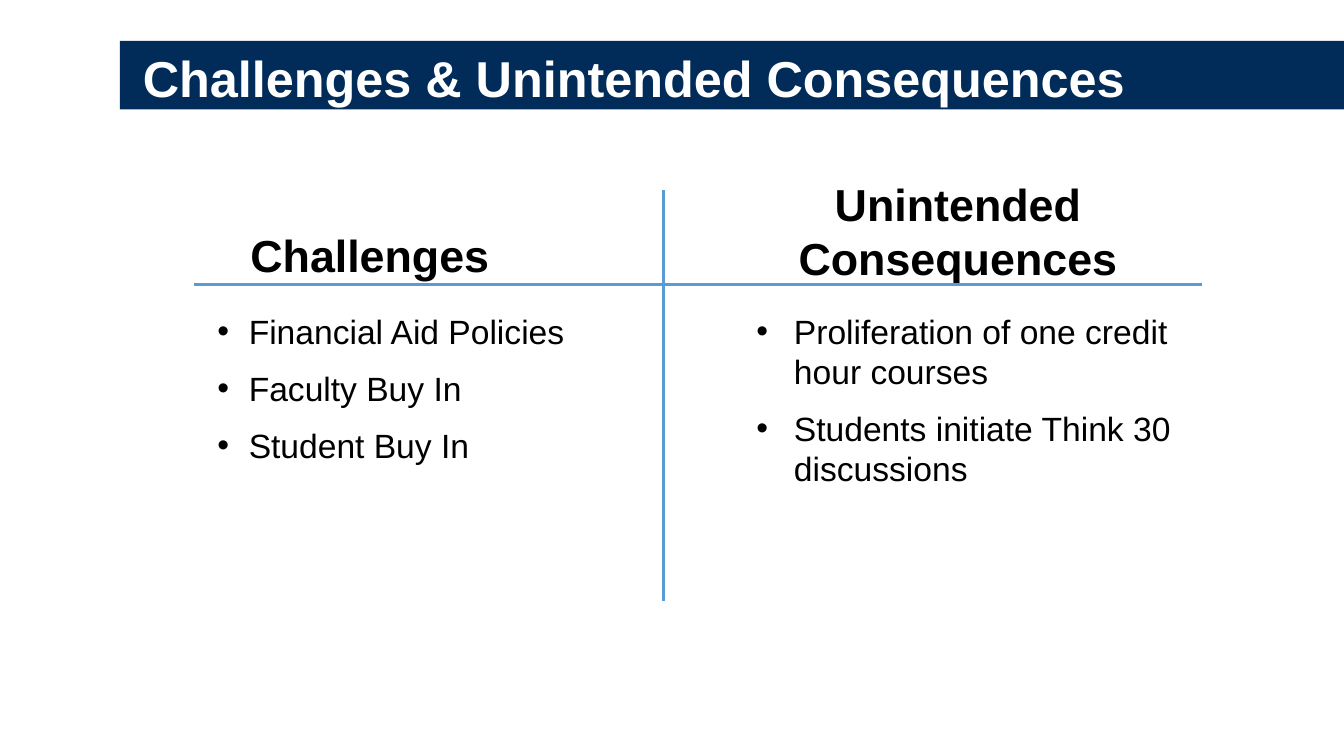
from dataclasses import dataclass

from lxml.etree import SubElement
from pptx import Presentation
from pptx.dml.color import RGBColor
from pptx.enum.shapes import MSO_CONNECTOR as Connector, MSO_SHAPE as Shape
from pptx.enum.text import MSO_ANCHOR as Anchor, PP_ALIGN as Align
from pptx.oxml.ns import qn
from pptx.util import Cm, Pt


@dataclass(frozen=True)
class Theme:
    font: str = "Arial"
    navy: RGBColor = RGBColor(0x01, 0x2C, 0x5A)
    blue: RGBColor = RGBColor(0x5B, 0x9B, 0xD5)
    white: RGBColor = RGBColor(0xFF, 0xFF, 0xFF)
    black: RGBColor = RGBColor(0, 0, 0)
    title_size: Pt = Pt(36)
    heading_size: Pt = Pt(32)
    body_size: Pt = Pt(24)
    rule_width: Pt = Pt(2.25)


THEME = Theme()


def add_text_frame(slide, left, top, width, height, wrap=True):
    text_box = slide.shapes.add_textbox(Cm(left), Cm(top), Cm(width), Cm(height))
    text_box.text_frame.word_wrap = wrap
    return text_box.text_frame


def add_run(paragraph, text, size, color, bold=False):
    run = paragraph.add_run()
    run.text = text
    run.font.name = THEME.font
    run.font.size = size
    run.font.bold = bold
    run.font.color.rgb = color


def add_title(slide, text):
    band = slide.shapes.add_shape(Shape.RECTANGLE, Cm(3.02), Cm(1.03), Cm(30.85), Cm(1.73))
    band.shadow.inherit = False
    band.fill.solid()
    band.fill.fore_color.rgb = THEME.navy
    band.line.fill.background()

    frame = add_text_frame(slide, 3.35, 0.89, 27.53, 2.29)
    frame.vertical_anchor = Anchor.MIDDLE
    paragraph = frame.paragraphs[0]
    paragraph.line_spacing = 0.9
    add_run(paragraph, text, THEME.title_size, THEME.white, bold=True)


def add_heading(slide, text, left, top, width, height):
    paragraph = add_text_frame(slide, left, top, width, height).paragraphs[0]
    paragraph.alignment = Align.CENTER
    add_run(paragraph, text, THEME.heading_size, THEME.black, bold=True)


def set_bullet(paragraph, margin, hanging):
    properties = paragraph._p.get_or_add_pPr()
    properties.set("marL", str(Cm(margin)))
    properties.set("indent", str(-Cm(hanging)))
    SubElement(properties, qn("a:buFont"), typeface=THEME.font)
    SubElement(properties, qn("a:buChar"), char="•")


def add_bullets(slide, items, left, width, height, margin, hanging, wrap=True):
    frame = add_text_frame(slide, left, 7.7, width, height, wrap)
    for index, item in enumerate(items):
        paragraph = frame.add_paragraph() if index else frame.paragraphs[0]
        set_bullet(paragraph, margin, hanging)
        paragraph.space_after = Pt(12)
        add_run(paragraph, item, THEME.body_size, THEME.black)


def add_rule(slide, *ends):
    rule = slide.shapes.add_connector(Connector.STRAIGHT, *map(Cm, ends))
    rule.line.color.rgb = THEME.blue
    rule.line.width = THEME.rule_width
    SubElement(rule._element.spPr, qn("a:effectLst"))


def main():
    presentation = Presentation()
    presentation.slide_width = Cm(33.87)
    presentation.slide_height = Cm(19.05)
    slide = presentation.slides.add_slide(presentation.slide_layouts[6])

    add_title(slide, "Challenges & Unintended Consequences")
    add_heading(slide, "Challenges", 5.26, 5.61, 8.13, 1.62)
    add_heading(slide, "Unintended Consequences", 18.52, 4.34, 11.25, 3)
    add_bullets(
        slide,
        ["Financial Aid Policies", "Faculty Buy In", "Student Buy In"],
        left=5.23, width=9.35, height=4.19, margin=0.79, hanging=0.79, wrap=False,
    )
    add_bullets(
        slide,
        ["Proliferation of one credit hour courses", "Students initiate Think 30 discussions"],
        left=18.49, width=11.4, height=6.25, margin=1.27, hanging=0.95,
    )
    add_rule(slide, 4.9, 7.16, 30.3, 7.16)
    add_rule(slide, 16.71, 4.8, 16.71, 15.14)

    presentation.save("out.pptx")


if __name__ == "__main__":
    main()
